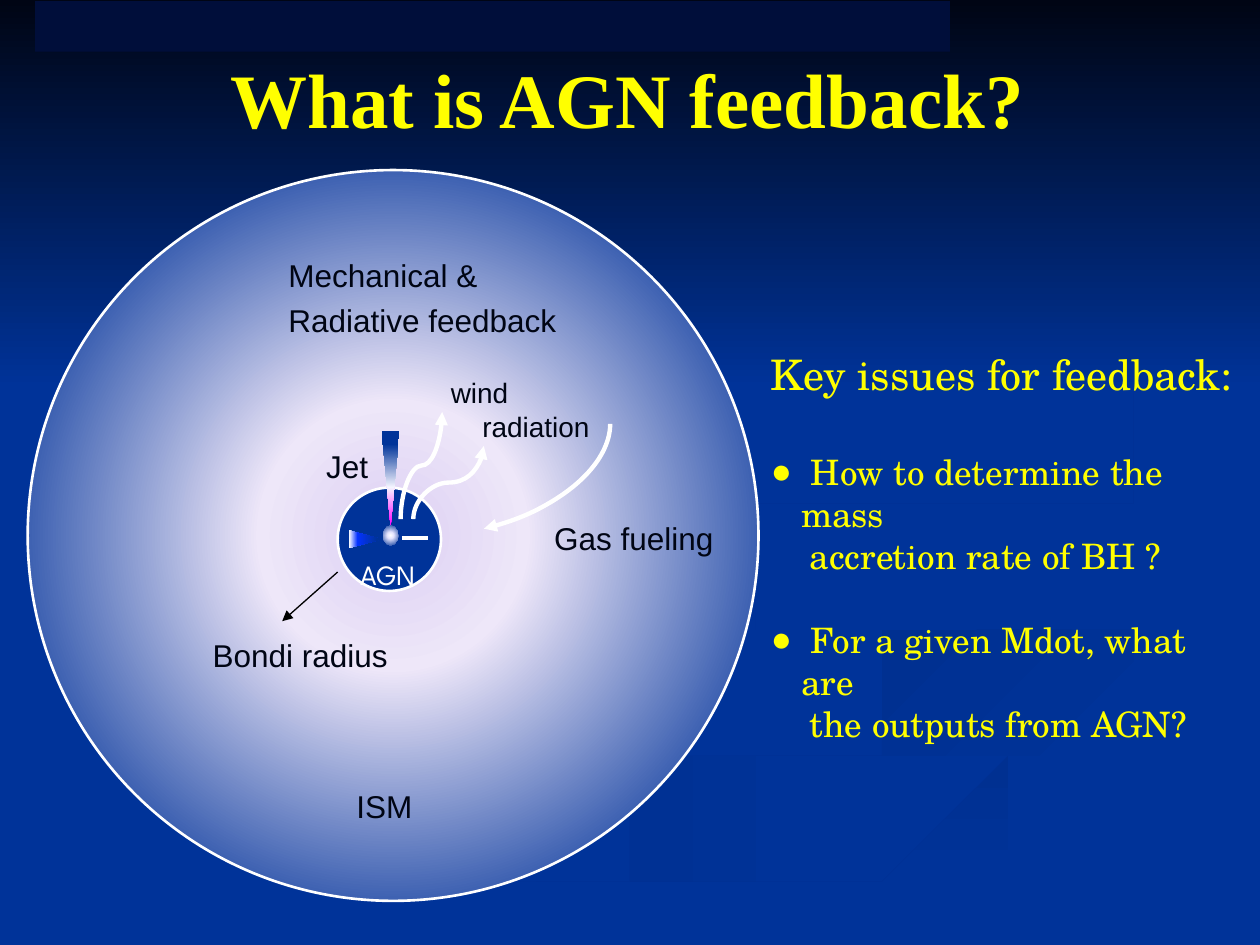
from lxml import etree
from pptx import Presentation
from pptx.dml.color import RGBColor
from pptx.enum.shapes import MSO_CONNECTOR, MSO_SHAPE
from pptx.enum.text import MSO_ANCHOR, PP_ALIGN
from pptx.oxml.ns import qn
from pptx.util import Inches, Pt

STRAIGHT, CURVE = MSO_CONNECTOR.STRAIGHT, MSO_CONNECTOR.CURVE
OVAL, TRIANGLE = MSO_SHAPE.OVAL, MSO_SHAPE.ISOSCELES_TRIANGLE
ARC, RECTANGLE = MSO_SHAPE.ARC, MSO_SHAPE.RECTANGLE
MIDDLE, TOP = MSO_ANCHOR.MIDDLE, MSO_ANCHOR.TOP
LEFT, CENTER = PP_ALIGN.LEFT, PP_ALIGN.CENTER

# The slide is a grid of 10 columns by 7.5 rows
COLUMNS, ROWS = 10, 7.5
CELL = Inches(1)

BLUE, NIGHT, WHITE, YELLOW = "003399", "000514", "FFFFFF", "FFFF00"
RIBBON_SHADE = [(0, "003091"), (100, BLUE)]

# Background ribbons: gradient angle, one edge forth, the other edge back
RIBBONS = [
    (0, [(5.75, 4.6), (6.42, 5.07), (7.7, 5.48), (7.95, 5.92), (6.5, 6.4), (3.61, 7.49)],
     [(3, 7.49), (5.4, 6.49), (7.67, 5.87), (7.62, 5.47), (5.7, 4.7)]),
    (45, [(7.24, 4.64), (7.92, 5.09), (9.2, 5.47), (8.94, 6.05)],
     [(9.18, 5.81), (8.68, 5.44), (7.55, 5.05)]),
    (90, [(5.03, 7.49), (6.96, 6.69), (9.98, 5.81)],
     [(9.98, 6.09), (7.52, 6.72), (5.71, 7.49)]),
    (45, [(7.62, 2.33), (8.9, 3.24), (7.86, 4.12), (6.24, 4.44), (6.22, 5)],
     [(5.8, 4.51), (7.63, 3.98), (8.86, 3.48)]),
]


def grid(value):
    return round(value * CELL)


def color(value):
    return RGBColor.from_string(value)


def set_gradient(shape, stops, angle=None):
    """Fill linearly at an angle in degrees, or from the centre outwards."""
    shape.fill.background()
    properties = shape._element.spPr
    old_fill = properties.find(qn("a:noFill"))
    gradient = etree.Element(qn("a:gradFill"), rotWithShape="1")
    stop_list = etree.SubElement(gradient, qn("a:gsLst"))
    for position, value in stops:
        stop = etree.SubElement(stop_list, qn("a:gs"), pos=str(position * 1000))
        etree.SubElement(stop, qn("a:srgbClr"), val=value)
    if angle is None:
        centre = etree.SubElement(gradient, qn("a:path"), path="circle")
        sides = dict.fromkeys("ltrb", "50000")
        etree.SubElement(centre, qn("a:fillToRect"), **sides)
    else:
        etree.SubElement(gradient, qn("a:lin"), ang=str(angle * 60000), scaled="0")
    properties.replace(old_fill, gradient)


def style(shape, fill=None, angle=None, line=None, width=1.5):
    shape.shadow.inherit = False
    if fill is None:
        shape.fill.background()
    elif isinstance(fill, str):
        shape.fill.solid()
        shape.fill.fore_color.rgb = color(fill)
    else:
        set_gradient(shape, fill, angle)
    if line:
        shape.line.color.rgb = color(line)
        shape.line.width = Pt(width)
    else:
        shape.line.fill.background()


def add_shape(slide, kind, box, rotation=0, **look):
    shape = slide.shapes.add_shape(kind, *map(grid, box))
    shape.rotation = rotation
    style(shape, **look)
    return shape


def smooth(points, steps=6):
    """Pass a Catmull-Rom curve through the points."""
    padded = [points[0], *points, points[-1]]
    curve = []
    for a, b, c, d in zip(padded, padded[1:], padded[2:], padded[3:]):
        for step in range(steps):
            t = step / steps
            curve.append(tuple(
                q + t * (r - p + t * (2 * p - 5 * q + 4 * r - s
                                      + t * (3 * q - p - 3 * r + s))) / 2
                for p, q, r, s in zip(a, b, c, d)))
    return curve + [points[-1]]


def add_ribbon(slide, angle, forth, back):
    points = smooth(forth) + smooth(back)
    builder = slide.shapes.build_freeform(*points[0], scale=CELL)
    builder.add_line_segments(points[1:], close=True)
    style(builder.convert_to_shape(), RIBBON_SHADE, angle)


def add_arrowhead(shape):
    etree.SubElement(shape.line._get_or_add_ln(), qn("a:tailEnd"), type="triangle")


def add_line(slide, start, end, value, width, arrow=True, kind=STRAIGHT):
    line = slide.shapes.add_connector(kind, *map(grid, start + end))
    line.line.color.rgb = color(value)
    line.line.width = Pt(width)
    etree.SubElement(line._element.spPr, qn("a:effectLst"))
    if arrow:
        add_arrowhead(line)
    return line


def add_rising_curve(slide, start, end):
    """Curve that leaves and arrives vertically: a quarter turn of a flat one."""
    (x1, y1), (x2, y2) = start, end
    middle_x, middle_y = (x1 + x2) / 2, (y1 + y2) / 2
    half_width, half_height = (y1 - y2) / 2, (x2 - x1) / 2
    curve = add_line(slide, (middle_x + half_width, middle_y + half_height),
                     (middle_x - half_width, middle_y - half_height),
                     WHITE, 2.5, kind=CURVE)
    curve._element.spPr.xfrm.set("rot", str(90 * 60000))


def add_run(paragraph, text, size, value, font="Arial", bold=False):
    run = paragraph.add_run()
    run.text = text
    run.font.size = Pt(size)
    run.font.name = font
    run.font.bold = bold
    run.font.color.rgb = color(value)


def add_frame(slide, box, wrap=True, anchor=TOP):
    frame = slide.shapes.add_textbox(*map(grid, box)).text_frame
    frame.word_wrap = wrap
    frame.vertical_anchor = anchor
    return frame


def add_label(slide, text, box, size=18, value=NIGHT, font="Arial", spacing=1.2,
              wrap=True, anchor=TOP, align=LEFT, bold=False):
    paragraph = add_frame(slide, box, wrap, anchor).paragraphs[0]
    paragraph.alignment = align
    paragraph.line_spacing = spacing
    add_run(paragraph, text, size, value, font, bold)


def set_indent(paragraph, margin, bullet=None):
    properties = paragraph._p.get_or_add_pPr()
    properties.set("marL", str(grid(margin)))
    properties.set("indent", str(-grid(margin) if bullet else 0))
    if bullet:
        etree.SubElement(properties, qn("a:buFont"), typeface="Arial")
        etree.SubElement(properties, qn("a:buChar"), char=bullet)


def add_key_issues(slide):
    frame = add_frame(slide, (6.02, 2.72, 3.86, 2.59))
    font = "TeX Gyre Schola"
    add_run(frame.paragraphs[0], "Key issues for feedback:", 24, YELLOW, font)
    issues = [(" How to determine the mass", "accretion rate of BH ?", 29),
              (" For a given Mdot, what are", "the outputs from AGN?", 24)]
    for first, second, gap in issues:
        for text, margin, bullet, before in ((first, 0.24, "●", gap),
                                             (second, 0.31, None, 0)):
            paragraph = frame.add_paragraph()
            paragraph.space_before = Pt(before)
            set_indent(paragraph, margin, bullet)
            add_run(paragraph, text, 20, YELLOW, font)


def add_background(slide):
    slide.background.fill.solid()
    slide.background.fill.fore_color.rgb = color(BLUE)
    for ribbon in RIBBONS:
        add_ribbon(slide, *ribbon)
    add_shape(slide, RECTANGLE, (0, 0, COLUMNS, 3.08),
              fill=[(0, NIGHT), (100, BLUE)], angle=90)


def add_galaxy(slide):
    # Interstellar medium and the nucleus inside it
    add_shape(slide, OVAL, (0.22, 1.35, 5.8, 5.8), line=WHITE,
              fill=[(0, "DCCFF3"), (26, "EEE7F9"), (86, BLUE)])
    add_shape(slide, OVAL, (2.68, 3.87, 0.82, 0.82), fill=BLUE, line=WHITE)
    # Outflows and inflow
    add_rising_curve(slide, (3.18, 4.12), (3.51, 3.27))
    add_rising_curve(slide, (3.28, 4.12), (3.84, 3.54))
    inflow = add_shape(slide, ARC, (3.02, 2.37, 1.33, 2.36), 76.5, line=WHITE, width=2.5)
    inflow.adjustments[0], inflow.adjustments[1] = 164.65, 0
    add_arrowhead(inflow)
    # Labels of the regions
    add_label(slide, "ISM", (2.73, 6.14, 1.08, 0.46))
    add_label(slide, "Jet", (2.49, 3.44, 0.55, 0.44))
    add_label(slide, "Gas fueling", (4.3, 4.01, 1.5, 0.44))
    add_label(slide, "AGN", (2.76, 4.32, 0.72, 0.39), 16, WHITE, "League Spartan")
    add_label(slide, "Mechanical & Radiative feedback", (2.19, 1.92, 2.59, 0.83))
    # Disc, jet and black hole
    add_line(slide, (3.19, 4.27), (3.4, 4.27), WHITE, 2, arrow=False)
    add_shape(slide, TRIANGLE, (2.83, 4.15, 0.14, 0.26), 90, angle=270,
              fill=[(0, WHITE), (26, "0432FF"), (86, BLUE)])
    add_shape(slide, TRIANGLE, (3.03, 3.42, 0.14, 0.76), 180, angle=90,
              fill=[(0, "FF00FF"), (41, "F5F5FF"), (86, BLUE)])
    add_shape(slide, OVAL, (3.04, 4.17, 0.12, 0.16),
              fill=[(0, WHITE), (26, "E5E5FF"), (100, BLUE)])


def main():
    presentation = Presentation()
    presentation.slide_width, presentation.slide_height = grid(COLUMNS), grid(ROWS)
    slide = presentation.slides.add_slide(presentation.slide_layouts[6])
    add_background(slide)
    add_label(slide, "What is AGN feedback?", (0.1, 0.15, 9.76, 1.25), 44, YELLOW,
              "Times New Roman", 1, anchor=MIDDLE, align=CENTER, bold=True)
    add_galaxy(slide)
    add_shape(slide, RECTANGLE, (0.28, 0.01, 7.26, 0.4), fill="000E3A")
    # Callouts
    add_line(slide, (2.68, 4.54), (2.24, 4.93), "000000", 0.75)
    for text, box, size in (("Bondi radius", (1.59, 5, 1.6, 0.4), 18),
                            ("wind", (3.48, 2.93, 0.66, 0.37), 16),
                            ("radiation", (3.73, 3.2, 1.06, 0.37), 16)):
        add_label(slide, text, box, size, spacing=1, wrap=False)
    add_key_issues(slide)
    presentation.save("out.pptx")


if __name__ == "__main__":
    main()
